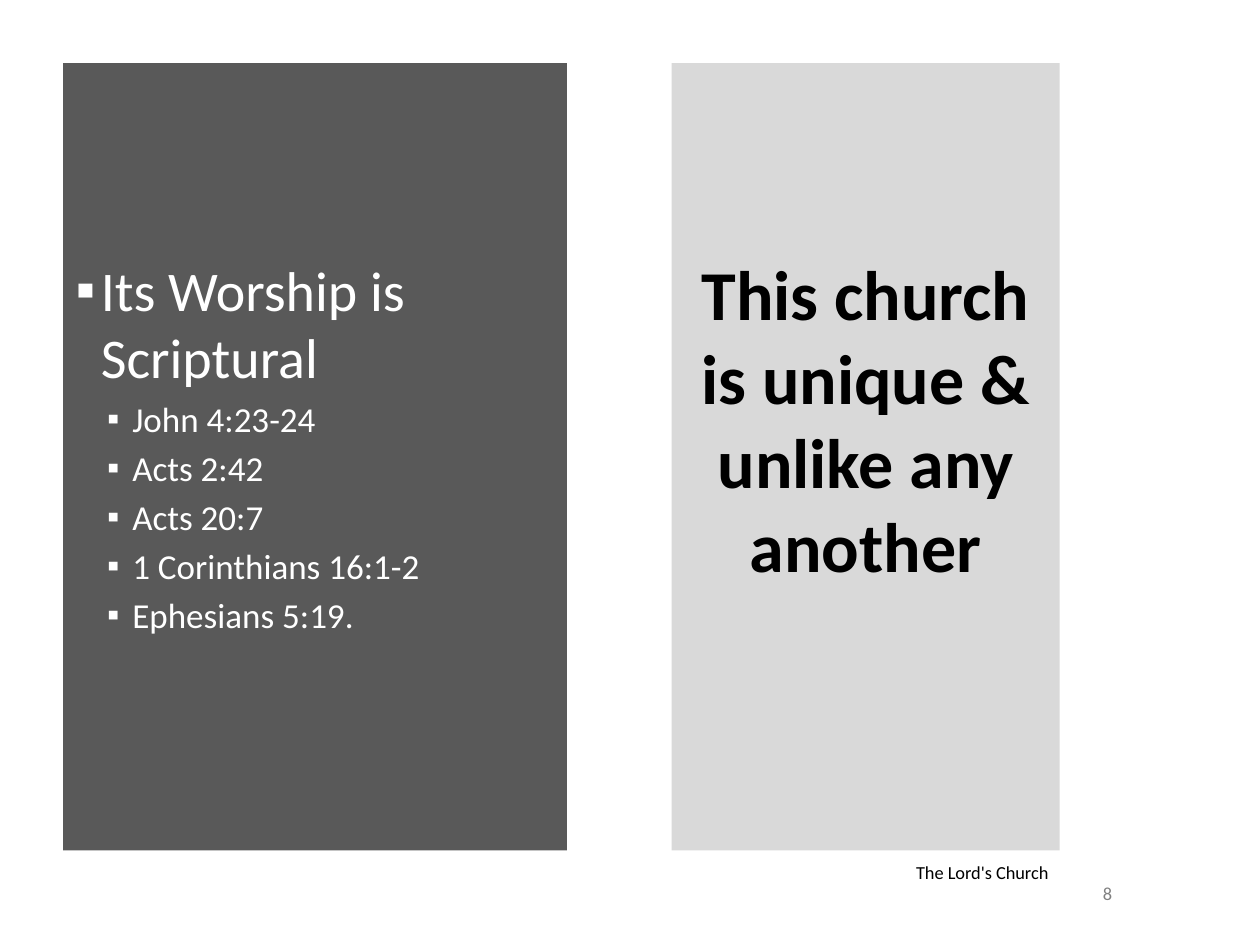
from pptx import Presentation
from pptx.dml.color import RGBColor
from pptx.enum.text import MSO_ANCHOR, MSO_AUTO_SIZE, PP_ALIGN
from pptx.oxml.ns import qn
from pptx.util import Inches, Pt
from lxml import etree

LEFT, CENTER, RIGHT = PP_ALIGN.LEFT, PP_ALIGN.CENTER, PP_ALIGN.RIGHT
TOP, MIDDLE, BOTTOM = MSO_ANCHOR.TOP, MSO_ANCHOR.MIDDLE, MSO_ANCHOR.BOTTOM
NO_AUTOFIT = MSO_AUTO_SIZE.NONE

WHITE = RGBColor(0xFF, 0xFF, 0xFF)
BLACK = RGBColor(0, 0, 0)
GRAY = RGBColor(0x80, 0x80, 0x80)
DARK_PANEL = RGBColor(0x59, 0x59, 0x59)
LIGHT_PANEL = RGBColor(0xD9, 0xD9, 0xD9)

FONT = "Calibri"
PANEL_TOP, PANEL_HEIGHT = 0.5, 6.25
HANGING = 0.2
HEADING = "Its Worship is Scriptural"
VERSES = ["John 4:23-24", "Acts 2:42", "Acts 20:7",
          "1 Corinthians 16:1-2", "Ephesians 5:19."]


def add_bullet(paragraph, indent):
    """Give a paragraph a hanging white square bullet."""
    properties = paragraph._p.get_or_add_pPr()
    properties.set("marL", str(Inches(indent)))
    properties.set("indent", str(-Inches(HANGING)))
    color = etree.SubElement(properties, qn("a:buClr"))
    etree.SubElement(color, qn("a:srgbClr"), val=str(WHITE))
    etree.SubElement(properties, qn("a:buFont"), typeface="Arial")
    etree.SubElement(properties, qn("a:buChar"), char="▪")


def write(paragraph, text, size, color, align=LEFT, bold=False,
          level=0, bullet_indent=None, space_before=0):
    """Write one formatted paragraph."""
    if bullet_indent is not None:
        add_bullet(paragraph, bullet_indent)
    paragraph.level = level
    paragraph.alignment = align
    paragraph.space_before = Pt(space_before)
    run = paragraph.add_run()
    run.text = text
    run.font.name = FONT
    run.font.size = Pt(size)
    run.font.bold = bold
    run.font.color.rgb = color


def place_panel(panel, left, width, fill, text_inset):
    """Turn a placeholder into a filled panel and return its text frame."""
    panel.left, panel.top = Inches(left), Inches(PANEL_TOP)
    panel.width, panel.height = Inches(width), Inches(PANEL_HEIGHT)
    panel.fill.solid()
    panel.fill.fore_color.rgb = fill
    frame = panel.text_frame
    frame.word_wrap = True
    frame.auto_size = NO_AUTOFIT
    frame.vertical_anchor = TOP
    frame.margin_top = Inches(text_inset)
    return frame


def add_label(slide, text, left, top, width, color, align, anchor):
    """Add a one-line label at the foot of the slide."""
    label = slide.shapes.add_textbox(Inches(left), Inches(top),
                                     Inches(width), Inches(0.17))
    frame = label.text_frame
    frame.word_wrap = True
    frame.vertical_anchor = anchor
    write(frame.paragraphs[0], text, 10.5, color, align=align)


def main():
    presentation = Presentation()
    presentation.slide_width = Inches(10)
    presentation.slide_height = Inches(7.5)
    slide = presentation.slides.add_slide(presentation.slide_layouts[1])

    # Scripture list on the dark panel
    scripture = place_panel(slide.placeholders[1], 0.5, 4, DARK_PANEL, 1.53)
    write(scripture.paragraphs[0], HEADING, 32, WHITE, bullet_indent=0.2)
    for verse in VERSES:
        write(scripture.add_paragraph(), verse, 20, WHITE, level=1,
              bullet_indent=0.45, space_before=4)

    # Title on the light panel
    title = place_panel(slide.shapes.title, 5.33, 3.08, LIGHT_PANEL, 1.49)
    write(title.paragraphs[0], "This church is unique & unlike any another",
          40, BLACK, align=CENTER, bold=True)

    # Slide number and footer
    add_label(slide, "8", 8.5, 7, 0.58, GRAY, CENTER, MIDDLE)
    add_label(slide, "The Lord's Church", 5.33, 6.89, 3.09, BLACK, RIGHT, BOTTOM)

    presentation.save("out.pptx")


if __name__ == "__main__":
    main()
